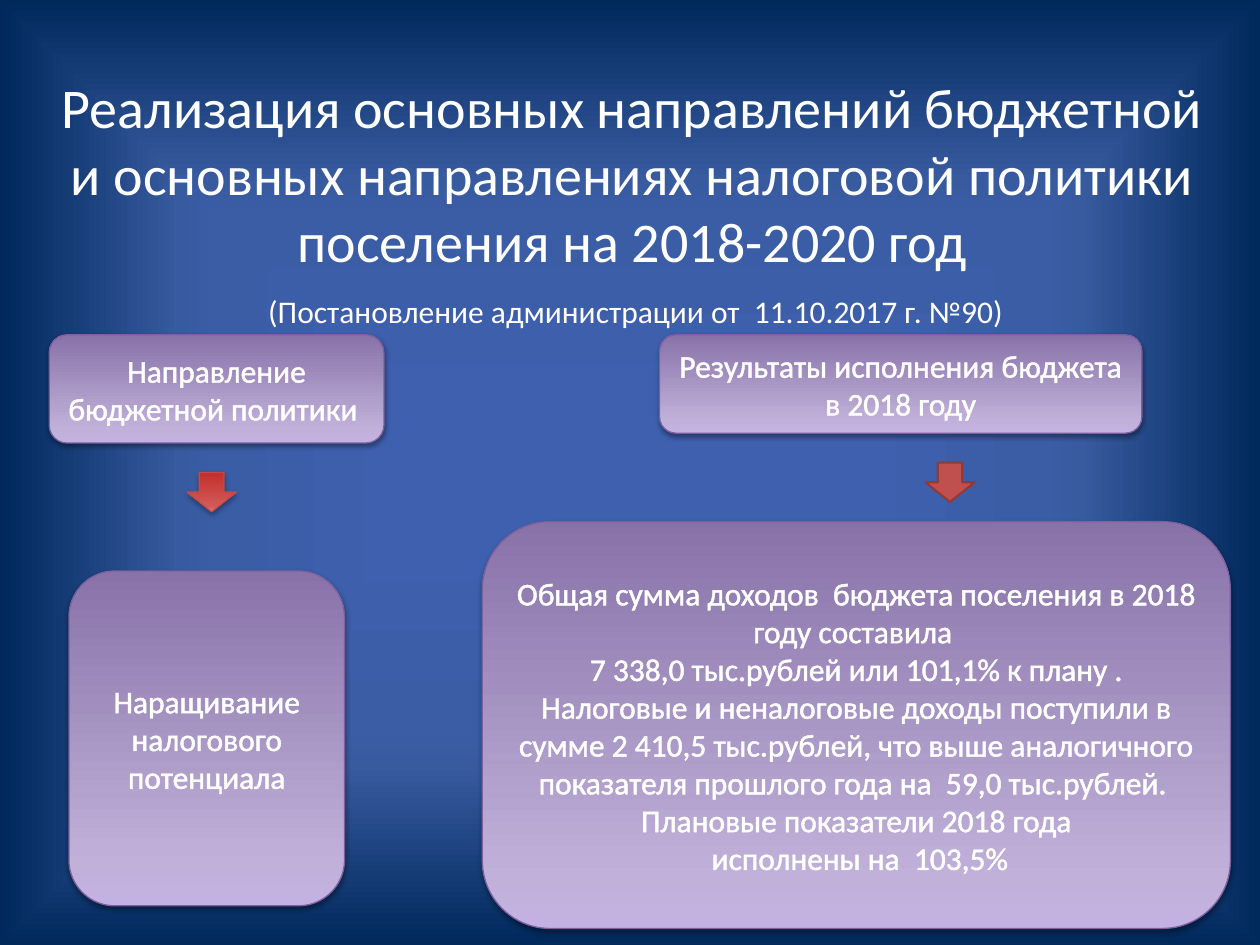
from lxml import etree
from pptx import Presentation
from pptx.dml.color import RGBColor
from pptx.enum import shapes, text
from pptx.oxml import ns, parse_xml
from pptx.util import Pt

WHITE = RGBColor(0xFF, 0xFF, 0xFF)
NAVY = RGBColor(0x00, 0x29, 0x5C)
PURPLE_EDGE = RGBColor(0x7D, 0x60, 0xA0)
RED = RGBColor(0xC0, 0x50, 0x4D)
RED_EDGE = RGBColor(0xBF, 0x4C, 0x48)
DARK_RED_EDGE = RGBColor(0x8E, 0x3B, 0x39)
BACKDROP = [(13, RGBColor(0x3F, 0x60, 0xAF)), (54, RGBColor(0x3A, 0x5D, 0xA6)),
            (62, RGBColor(0x38, 0x5A, 0x9F)), (100, NAVY)]
PURPLES = [(0, RGBColor(0xC4, 0xB1, 0xE3)), (12, RGBColor(0xC1, 0xB1, 0xDA)),
           (100, RGBColor(0x88, 0x72, 0xA8))]
REDS = [(0, RGBColor(0xE3, 0x7F, 0x7D)), (12, RGBColor(0xD3, 0x5B, 0x59)),
        (100, RGBColor(0xC3, 0x2F, 0x2B))]
UPWARD = '<a:lin ang="16200000" scaled="0"/>'
FROM_CENTRE = ('<a:path path="shape"><a:fillToRect l="50000" t="50000" '
               'r="50000" b="50000"/></a:path>')
FONT = "Calibri"


def set_gradient(holder, stops, direction):
    stop_xml = "".join(f'<a:gs pos="{pos * 1000}"><a:srgbClr val="{color}"/></a:gs>'
                       for pos, color in stops)
    gradient = parse_xml(f'<a:gradFill {ns.nsdecls("a")} rotWithShape="1">'
                         f'<a:gsLst>{stop_xml}</a:gsLst>{direction}</a:gradFill>')
    holder.replace(holder.find(ns.qn("a:solidFill")), gradient)


def add_raised(kind, bounds, stops, edge, shadow_alpha):
    raised = slide.shapes.add_shape(kind, *[Pt(v) for v in bounds])
    raised.fill.solid()
    set_gradient(raised.element.spPr, stops, UPWARD)
    raised.line.color.rgb = edge
    raised.line.width = Pt(0.75)
    raised.shadow.inherit = False
    effects = raised.element.spPr.find(ns.qn("a:effectLst"))
    effects.append(parse_xml(
        f'<a:outerShdw {ns.nsdecls("a")} blurRad="{Pt(3.1)}" dist="{Pt(1.6)}" '
        f'dir="5400000" rotWithShape="0"><a:srgbClr val="000000">'
        f'<a:alpha val="{shadow_alpha * 1000}"/></a:srgbClr></a:outerShdw>'))
    return raised


prs = Presentation()
prs.slide_width, prs.slide_height = Pt(720), Pt(540)
slide = prs.slides.add_slide(prs.slide_layouts[5])
slide.background.fill.solid()
set_gradient(slide.element.find(".//" + ns.qn("p:bgPr")), BACKDROP, FROM_CENTRE)

title = slide.shapes.title
title.left, title.top, title.width, title.height = Pt(19.5), Pt(35.3), Pt(684), Pt(127.5)
title.text_frame.auto_size = text.MSO_AUTO_SIZE.NONE
title.text_frame.vertical_anchor = text.MSO_ANCHOR.MIDDLE
heading = title.text_frame.paragraphs[0]
heading.alignment = text.PP_ALIGN.CENTER
heading_run = heading.add_run()
heading_run.text = ("Реализация основных направлений бюджетной и основных "
                    "направлениях налоговой политики поселения на 2018-2020 год")

decree = slide.shapes.add_textbox(Pt(146.2), Pt(163.4), Pt(517.5), Pt(29))
decree.text_frame.word_wrap = True
decree.text_frame.auto_size = text.MSO_AUTO_SIZE.SHAPE_TO_FIT_TEXT
decree_run = decree.text_frame.paragraphs[0].add_run()
decree_run.text = "(Постановление администрации от  11.10.2017 г. №90)"

for run, size in [(heading_run, 32), (decree_run, 18)]:
    run.font.name = FONT
    run.font.size = Pt(size)
    run.font.color.rgb = WHITE

panels = [
    ((28.1, 191.3, 191.3, 61.9), ["Направление бюджетной политики "]),
    ((376.9, 191.3, 275.6, 56.2), ["Результаты исполнения бюджета в 2018 году"]),
    ((39.4, 326.3, 157.5, 191.3), ["Наращивание налогового потенциала"]),
    ((275.6, 298.1, 427.5, 232.5), [
        "Общая сумма доходов  бюджета поселения в 2018 году составила ",
        "7 338,0 тыс.рублей или 101,1% к плану . Налоговые и неналоговые доходы "
        "поступили в сумме 2 410,5 тыс.рублей, что выше аналогичного показателя "
        "прошлого года на  59,0 тыс.рублей. ",
        "Плановые показатели 2018 года",
        " исполнены на  103,5%"]),
]
for bounds, lines in panels:
    panel = add_raised(shapes.MSO_SHAPE.ROUNDED_RECTANGLE, bounds, PURPLES, PURPLE_EDGE, 38)
    frame = panel.text_frame
    frame.word_wrap = True
    frame.vertical_anchor = text.MSO_ANCHOR.MIDDLE
    for index, line in enumerate(lines):
        paragraph = frame.add_paragraph() if index else frame.paragraphs[0]
        paragraph.alignment = text.PP_ALIGN.CENTER
        run = paragraph.add_run()
        run.text = line
        run.font.name = FONT
        run.font.size = Pt(18)
        run.font.color.rgb = WHITE
        outline = etree.Element(ns.qn("a:ln"), w=str(Pt(0.83)))
        outline_fill = etree.SubElement(outline, ns.qn("a:solidFill"))
        etree.SubElement(outline_fill, ns.qn("a:srgbClr"), val=str(WHITE))
        run.font.fill
        run._r.get_or_add_rPr().insert(0, outline)

add_raised(shapes.MSO_SHAPE.DOWN_ARROW, (106.9, 270, 28.1, 22.5), REDS, RED_EDGE, 35)

results_arrow = slide.shapes.add_shape(
    shapes.MSO_SHAPE.DOWN_ARROW, Pt(528.8), Pt(264.4), Pt(28.1), Pt(22.5))
results_arrow.fill.solid()
results_arrow.fill.fore_color.rgb = RED
results_arrow.line.color.rgb = DARK_RED_EDGE
results_arrow.line.width = Pt(1.25)
results_arrow.shadow.inherit = False

prs.save("out.pptx")
